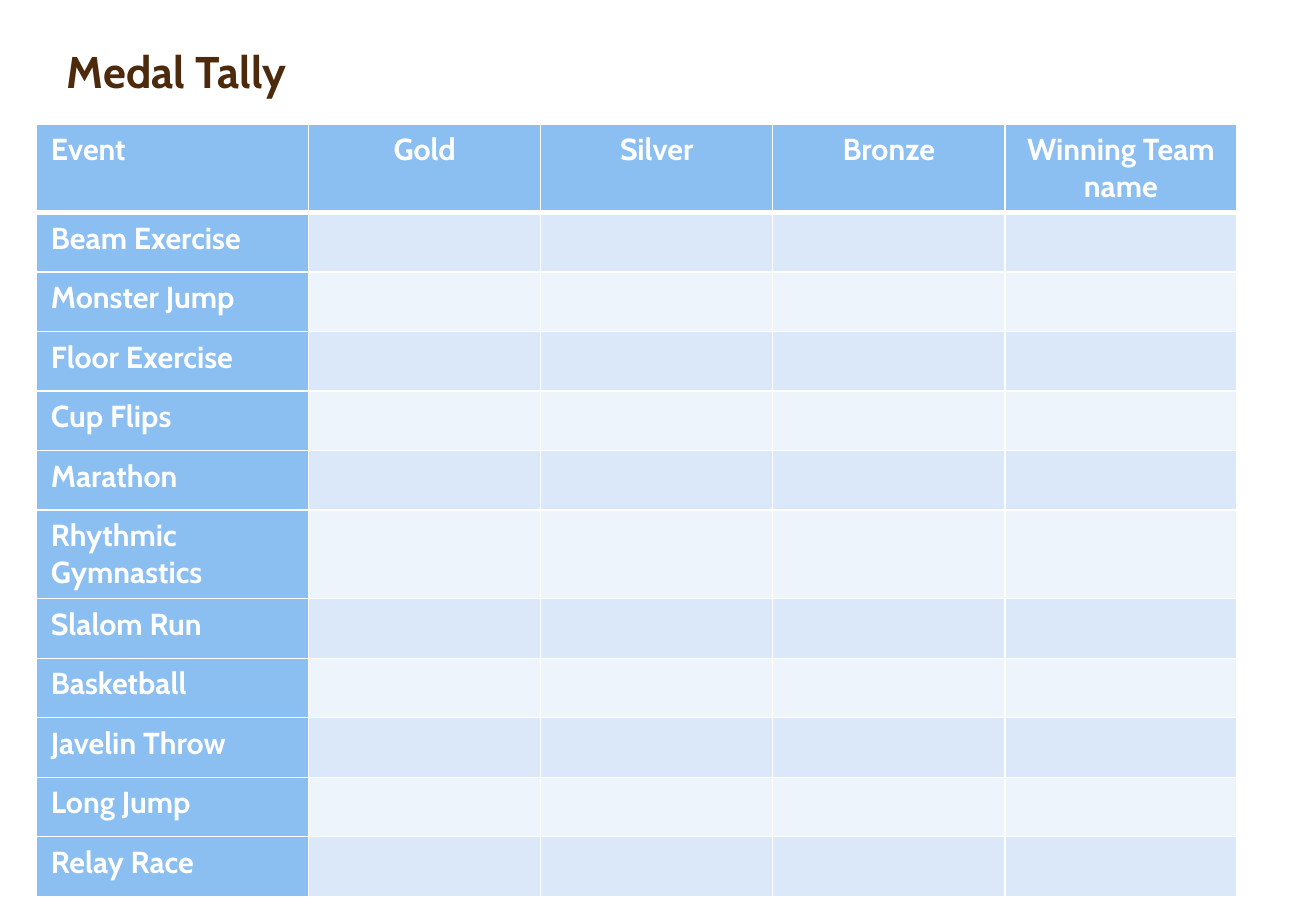
from dataclasses import dataclass

from lxml import etree
from pptx import Presentation
from pptx.dml.color import RGBColor
from pptx.enum.text import MSO_ANCHOR, PP_ALIGN
from pptx.oxml.ns import qn
from pptx.util import Inches, Pt

LEFT = PP_ALIGN.LEFT
CENTER = PP_ALIGN.CENTER
BOTTOM = MSO_ANCHOR.BOTTOM


@dataclass(frozen=True)
class Theme:
    """Hold the colours, font and type sizes."""
    font: str = "Cabin"
    brown: str = "4D2A0B"
    white: str = "FFFFFF"
    blue: str = "8BBEF1"
    bands: tuple = ("DAE8FA", "EEF4FC")
    title: float = 26.3
    label: float = 18
    thin: float = 1
    thick: float = 3


THEME = Theme()
HEADS = ["Event", "Gold", "Silver", "Bronze", "Winning Team name"]
EVENTS = [
    "Beam Exercise", "Monster Jump", "Floor Exercise", "Cup Flips",
    "Marathon", "Rhythmic Gymnastics", "Slalom Run", "Basketball",
    "Javelin Throw", "Long Jump", "Relay Race",
]
WIDTHS = [2.24] + [1.91] * 4
TALL = {"Event": 0.72, "Rhythmic Gymnastics": 0.71}
ROW = 0.49


def style(para, size, color, align):
    """Format one paragraph in the theme font."""
    para.alignment = align
    font = para.font
    font.name = THEME.font
    font.size = Pt(size)
    font.bold = True
    font.color.rgb = RGBColor.from_string(color)


def add_title(slide, text):
    """Place and format the slide title."""
    title = slide.shapes.title
    title.left, title.top = Inches(0.45), Inches(0.33)
    title.width, title.height = Inches(5.38), Inches(0.53)
    frame = title.text_frame
    frame.text = text
    frame.word_wrap = True
    frame.vertical_anchor = BOTTOM
    para = frame.paragraphs[0]
    para.line_spacing = 0.9
    style(para, THEME.title, THEME.brown, LEFT)


def add_edges(cell, top, bottom):
    """Draw white borders, given the top and bottom weights."""
    props = cell._tc.get_or_add_tcPr()
    sides = {"L": THEME.thin, "R": THEME.thin, "T": top, "B": bottom}
    for side, weight in sides.items():
        line = etree.SubElement(props, qn(f"a:ln{side}"), w=str(Pt(weight)))
        fill = etree.SubElement(line, qn("a:solidFill"))
        etree.SubElement(fill, qn("a:srgbClr"), val=THEME.white)


def fill_cell(cell, row, col, text):
    """Give a cell its borders, fill and label."""
    add_edges(cell, THEME.thick if row == 1 else THEME.thin,
              THEME.thick if row == 0 else THEME.thin)
    head = row == 0 or col == 0
    color = THEME.blue if head else THEME.bands[(row - 1) % 2]
    cell.fill.solid()
    cell.fill.fore_color.rgb = RGBColor.from_string(color)
    cell.margin_left = cell.margin_right = Inches(0.12)
    cell.margin_top = cell.margin_bottom = Inches(0.06)
    if text:
        cell.text = text
    style(cell.text_frame.paragraphs[0], THEME.label, THEME.white,
          CENTER if col else LEFT)


def add_tally(slide):
    """Build the medal table."""
    rows = [HEADS] + [[event] + [""] * 4 for event in EVENTS]
    highs = [TALL.get(row[0], ROW) for row in rows]
    table = slide.shapes.add_table(
        len(rows), len(HEADS), Inches(0.3), Inches(1.02),
        Inches(sum(WIDTHS)), Inches(sum(highs))).table
    table.first_col = True
    for col, width in zip(table.columns, WIDTHS):
        col.width = Inches(width)
    for i, texts in enumerate(rows):
        table.rows[i].height = Inches(highs[i])
        for j, text in enumerate(texts):
            fill_cell(table.cell(i, j), i, j, text)


def main():
    """Build and save the slide."""
    deck = Presentation()
    deck.slide_width, deck.slide_height = Inches(10.83), Inches(7.5)
    slide = deck.slides.add_slide(deck.slide_layouts[5])
    add_title(slide, "Medal Tally")
    add_tally(slide)
    deck.save("out.pptx")


if __name__ == "__main__":
    main()
